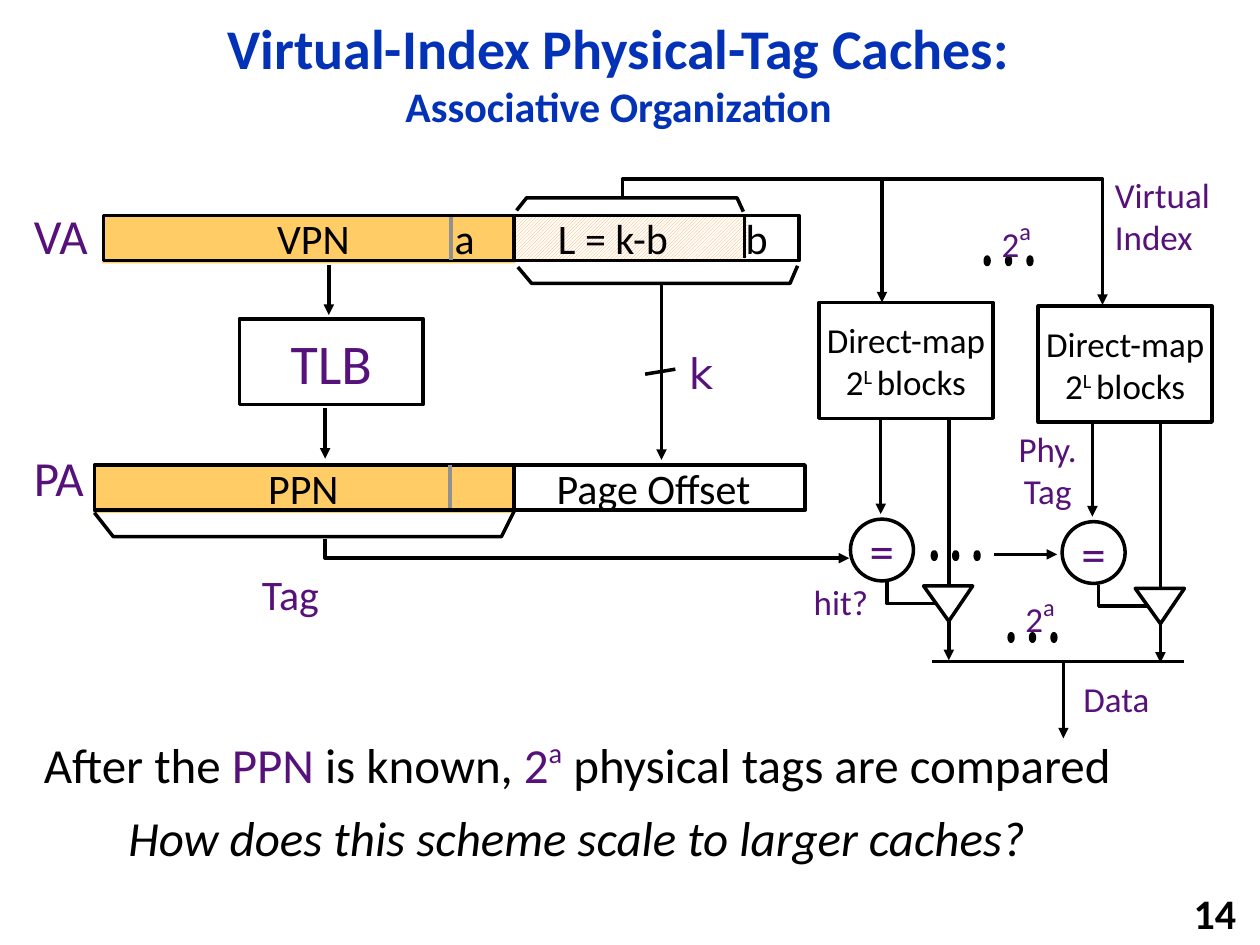
"""Build a slide on associative virtual-index physical-tag caches."""
import lxml.etree
import pptx
import pptx.dml.color
import pptx.enum.dml
import pptx.enum.shapes
import pptx.enum.text
import pptx.oxml.ns
import pptx.util

Inches, Pt = pptx.util.Inches, pptx.util.Pt
RGBColor = pptx.dml.color.RGBColor
SHAPE = pptx.enum.shapes.MSO_SHAPE
ALIGN = pptx.enum.text.PP_ALIGN
ANCHOR = pptx.enum.text.MSO_ANCHOR
AUTO = pptx.enum.text.MSO_AUTO_SIZE
qn = pptx.oxml.ns.qn

BLACK = RGBColor(0, 0, 0)
WHITE = RGBColor(255, 255, 255)
BLUE = RGBColor(0x03, 0x32, 0xB7)
PURPLE = RGBColor(0x56, 0x12, 0x7A)
GOLD = RGBColor(0xFF, 0xCC, 0x66)
ORANGE = RGBColor(0xFF, 0xA7, 0x4F)
GRAY = RGBColor(0x91, 0x91, 0x91)

TITLE = [("Virtual-Index Physical-Tag Caches:", 32), ("Associative Organization", 24)]
TWO_TO_A = [("2", 20, PURPLE, 0), ("a", 24, PURPLE, 40)]
BANK = [[("Direct-map", 20, BLACK, 0)],
        [("2", 20, BLACK, 0), ("L ", 20, BLACK, 30), ("blocks", 20, BLACK, 0)]]
TAGS_COMPARED = [("After the", 28, BLACK, 0), (" PPN ", 28, PURPLE, 0),
                 ("is known, ", 28, BLACK, 0), ("2", 28, PURPLE, 0),
                 ("a", 28, PURPLE, 40), (" physical tags are compared", 28, BLACK, 0)]

ADDRESS_FILLS = [(0.81, 1.71, 3.28, 0.38), (0.74, 3.69, 3.33, 0.38)]
INDEX_FILL = (4.08, 1.71, 1.85, 0.36)
ADDRESS_BARS = [
    ((0.82, 1.71, 5.52, 0.36), "\tVPN\ta\tL = k-b\tb", (1.28, 2.69, 3.51, 5.0)),
    ((0.75, 3.69, 5.64, 0.36), "\tPPN\tPage Offset", (1.28, 3.57)),
]
DIVIDERS = [((5.91, 1.71), (5.91, 2.05), BLACK), ((4.08, 1.72), (4.08, 2.07), BLACK),
            ((4.08, 3.71), (4.08, 4.06), BLACK), ((3.57, 3.69), (3.57, 4.03), GRAY),
            ((3.58, 1.72), (3.58, 2.06), GRAY), ((5.36, 2.93), (5.12, 2.97), BLACK),
            ((7.4, 5.25), (9.4, 5.25), BLACK)]
ARROWS = [((2.61, 2.1), (2.61, 2.5)), ((2.58, 3.24), (2.58, 3.64)),
          ((5.25, 2.25), (5.25, 3.65)), ((7.89, 4.4), (8.39, 4.4)),
          ((8.44, 5.26), (8.44, 5.86))]
BRACES = [[(4.1, 1.67), (4.18, 1.57), (5.85, 1.57), (5.9, 1.68)],
          [(4.11, 2.12), (4.22, 2.25), (6.27, 2.25), (6.33, 2.11)],
          [(0.75, 4.07), (0.9, 4.26), (3.98, 4.26), (4.08, 4.06)]]
ROUTES = [[(2.58, 4.28), (2.58, 4.43), (6.74, 4.43)],
          [(4.94, 1.56), (4.94, 1.42), (7, 1.42), (7, 2.4)],
          [(7, 1.42), (8.75, 1.42), (8.75, 2.42)]]
BANKS = [(6.5, 2.4, 1.38, 0.92), (8.24, 2.43, 1.38, 0.92)]
WAY_OFFSETS = [(0, 0), (1.68, 0.02)]
ELLIPSES = [(7.82, 2.04), (8.01, 5.03), (7.4, 4.38)]
DOT_STEP = 0.17
LABELS = [
    ((6.36, 4.56, 0.64, 0.43), [[("hit?", 20, PURPLE, 0)]], ALIGN.LEFT),
    ((8.5, 5.33, 0.73, 0.43), [[("Data", 20, PURPLE, 0)]], ALIGN.LEFT),
    ((7.97, 3.34, 0.69, 0.77), [[("Phy.", 20, PURPLE, 0)], [("Tag", 20, PURPLE, 0)]], ALIGN.CENTER),
    ((1.98, 4.46, 0.68, 0.5), [[("Tag", 24, PURPLE, 0)]], ALIGN.LEFT),
    ((0.17, 1.58, 0.65, 0.57), [[("VA", 28, PURPLE, 0)]], ALIGN.LEFT),
    ((0.17, 3.5, 0.63, 0.57), [[("PA", 28, PURPLE, 0)]], ALIGN.LEFT),
    ((8.75, 1.33, 0.96, 0.77), [[("Virtual", 20, PURPLE, 0)], [("Index", 20, PURPLE, 0)]], ALIGN.LEFT),
    ((5.37, 2.71, 0.4, 0.5), [[("k", 24, PURPLE, 0)]], ALIGN.LEFT),
    ((7.85, 1.66, 0.45, 0.43), [TWO_TO_A], ALIGN.LEFT),
    ((8.04, 4.64, 0.45, 0.43), [TWO_TO_A], ALIGN.LEFT),
    ((0.25, 5.78, 8.81, 0.57), [TAGS_COMPARED], ALIGN.LEFT),
    ((0.92, 6.36, 7.92, 0.57),
     [[("How does this scheme scale to larger caches?", 28, BLACK, 0)]], ALIGN.LEFT),
    ((7.83, 7.08, 2.08, 0.32), [[("14", 24, BLACK, 0)]], ALIGN.RIGHT),
]


def write(box, paragraphs, align=ALIGN.CENTER):
    frame = box.text_frame
    frame.word_wrap = False
    for index, spans in enumerate(paragraphs):
        para = frame.add_paragraph() if index else frame.paragraphs[0]
        para.alignment = align
        for text, size, color, raised in spans:
            span = para.add_run()
            span.text = text
            span.font.name, span.font.size = "Calibri", Pt(size)
            span.font.color.rgb = color
            if raised:
                span.font._element.set("baseline", str(raised * 1000))
    return frame


def style(shape, fill=None, line=BLACK):
    shape.shadow.inherit = False
    if fill is None:
        shape.fill.background()
    else:
        shape.fill.solid()
        shape.fill.fore_color.rgb = fill
    if line is None:
        shape.line.fill.background()
    else:
        shape.line.color.rgb, shape.line.width = line, Pt(2)
    return shape


def add_preset(page, kind, place, fill=None, line=BLACK):
    return style(page.shapes.add_shape(kind, *map(Inches, place)), fill, line)


def add_head(line):
    lxml.etree.SubElement(line.line._get_or_add_ln(), qn("a:tailEnd"), type="triangle")


def add_line(page, start, end, color=BLACK, head=False):
    straight = pptx.enum.shapes.MSO_CONNECTOR.STRAIGHT
    line = page.shapes.add_connector(straight, *map(Inches, start + end))
    line.line.color.rgb, line.line.width = color, Pt(2)
    lxml.etree.SubElement(line._element.spPr, qn("a:effectLst"))
    if head:
        add_head(line)


def add_path(page, points, fill=None, close=False, head=False):
    corners = [(Inches(x), Inches(y)) for x, y in points]
    builder = page.shapes.build_freeform(*corners[0])
    builder.add_line_segments(corners[1:], close=close)
    path = style(builder.convert_to_shape(), fill)
    if head:
        add_head(path)


def add_address_bar(page, place, text, stops):
    bar = add_preset(page, SHAPE.RECTANGLE, place)
    frame = write(bar, [[(text, 24, BLACK, 0)]], ALIGN.LEFT)
    frame.word_wrap = True
    tabs = lxml.etree.SubElement(frame.paragraphs[0]._p.get_or_add_pPr(), qn("a:tabLst"))
    for stop in stops:
        lxml.etree.SubElement(tabs, qn("a:tab"), pos=str(Inches(stop)), algn="l")


def add_way(page, right, down):
    def move(*points):
        return [(x + right, y + down) for x, y in points]
    comparator = add_preset(page, SHAPE.OVAL, (6.75 + right, 4.12 + down, 0.5, 0.49), WHITE)
    write(comparator, [[("=", 28, PURPLE, 0)]])
    add_line(page, *move((6.99, 3.32), (6.99, 4.08)), head=True)
    add_line(page, *move((7.53, 3.32), (7.53, 5.24)), head=True)
    add_path(page, move((7.33, 4.65), (7.72, 4.65), (7.53, 4.93)), WHITE, close=True)
    add_path(page, move((7.04, 4.62), (7.04, 4.79), (7.44, 4.79)))


def add_title(page):
    box = page.shapes.title
    box.left, box.top, box.width, box.height = map(Inches, (0.92, 0.17, 7.98, 0.81))
    frame = box.text_frame
    frame.text = "\v".join(text for text, size in TITLE)
    frame.auto_size, frame.vertical_anchor = AUTO.NONE, ANCHOR.MIDDLE
    frame.paragraphs[0].alignment = ALIGN.CENTER
    for span, (text, size) in zip(frame.paragraphs[0].runs, TITLE):
        span.font.name, span.font.size, span.font.bold = "Calibri", Pt(size), True
        span.font.color.rgb = BLUE


def main():
    deck = pptx.Presentation()
    deck.slide_width, deck.slide_height = Inches(10), Inches(7.5)
    page = deck.slides.add_slide(deck.slide_layouts[5])
    add_title(page)
    for place in ADDRESS_FILLS:
        add_preset(page, SHAPE.RECTANGLE, place, GOLD, None)
    index = add_preset(page, SHAPE.RECTANGLE, INDEX_FILL, None, None)
    index.fill.patterned()
    index.fill.pattern = pptx.enum.dml.MSO_PATTERN.DARK_UPWARD_DIAGONAL
    index.fill.fore_color.rgb, index.fill.back_color.rgb = ORANGE, WHITE
    for place, text, stops in ADDRESS_BARS:
        add_address_bar(page, place, text, stops)
    write(add_preset(page, SHAPE.RECTANGLE, (1.9, 2.53, 1.46, 0.68)), [[("TLB", 32, PURPLE, 0)]])
    for place in BANKS:
        write(add_preset(page, SHAPE.RECTANGLE, place), BANK)
    for start, end, color in DIVIDERS:
        add_line(page, start, end, color)
    for start, end in ARROWS:
        add_line(page, start, end, head=True)
    for points in BRACES:
        add_path(page, points)
    for points in ROUTES:
        add_path(page, points, head=True)
    for right, down in WAY_OFFSETS:
        add_way(page, right, down)
    for left, top in ELLIPSES:
        for step in range(3):
            add_preset(page, SHAPE.OVAL, (left + step * DOT_STEP, top, 0.03, 0.06), BLACK)
    for place, paragraphs, align in LABELS:
        frame = write(page.shapes.add_textbox(*map(Inches, place)), paragraphs, align)
        frame.auto_size = AUTO.SHAPE_TO_FIT_TEXT
        font = frame.paragraphs[0].runs[0].font
        if frame.text == "k":
            font.name = "DejaVu Sans"
        elif frame.text == "14":
            font.bold, frame.auto_size = True, AUTO.NONE
            frame.vertical_anchor = ANCHOR.MIDDLE
        elif frame.text.startswith("How"):
            font.italic = True
    deck.save("out.pptx")


if __name__ == "__main__":
    main()
